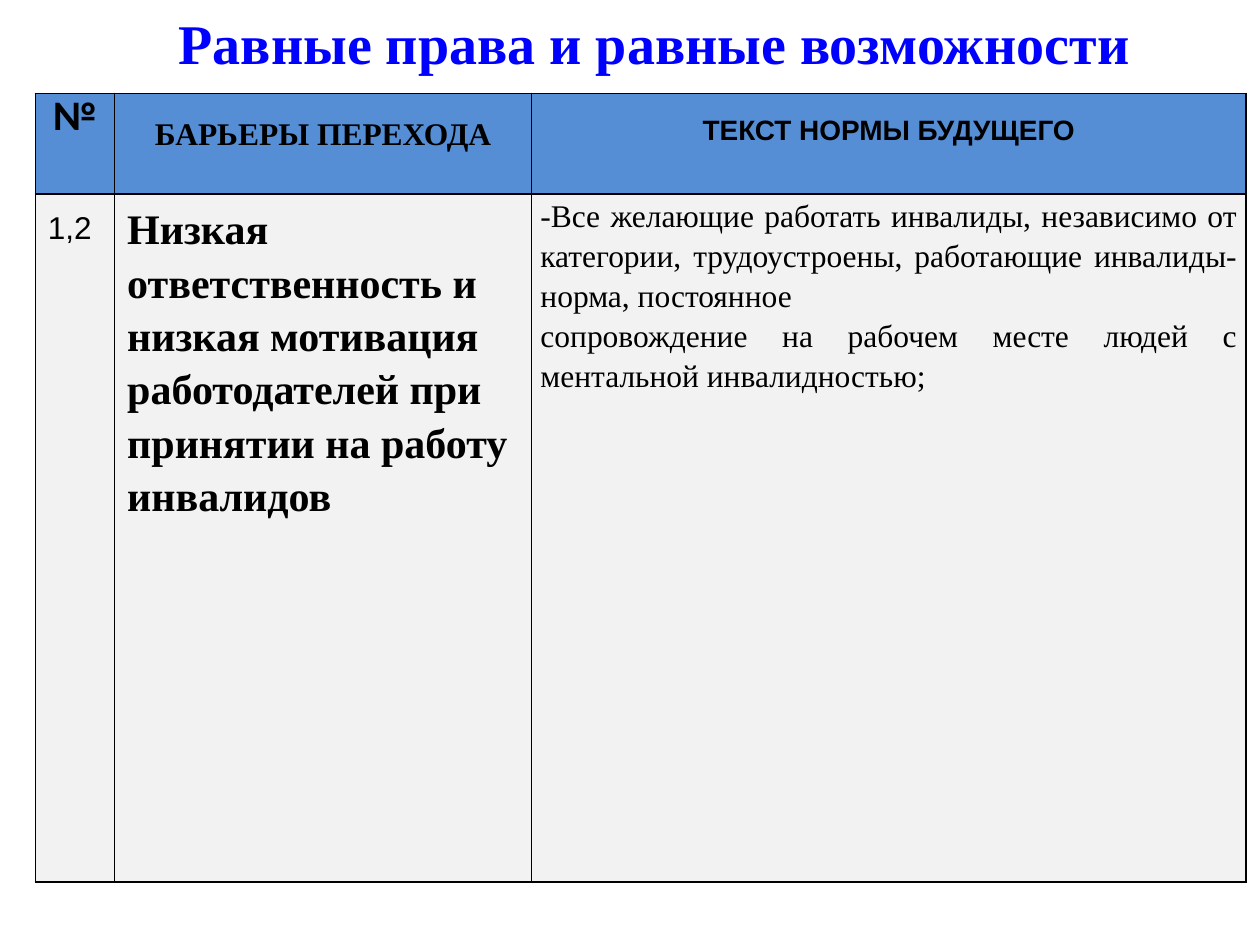
from lxml import etree
from pptx import Presentation
from pptx.dml.color import RGBColor
from pptx.enum import text
from pptx.oxml import ns
from pptx.util import Inches, Pt

BLACK = RGBColor(0x00, 0x00, 0x00)
TITLE_BLUE = RGBColor(0x00, 0x00, 0xFF)
HEADER_BLUE = RGBColor(0x55, 0x8E, 0xD5)
BODY_GREY = RGBColor(0xF2, 0xF2, 0xF2)
SERIF = "Times New Roman"
LEFT, CENTER, JUSTIFY = (text.PP_ALIGN.LEFT, text.PP_ALIGN.CENTER,
                         text.PP_ALIGN.JUSTIFY)

COLUMN_WIDTHS = (0.63, 3.31, 5.67)
ROW_HEIGHTS = (0.8, 5.46)

# Each cell: paragraphs, font, size, bold, alignment, line spacing
HEADER = (
    (["№"], "Calibri", 24, True, CENTER, Pt(24)),
    (["БАРЬЕРЫ ПЕРЕХОДА"], SERIF, 18, True, CENTER, 1.5),
    (["ТЕКСТ НОРМЫ БУДУЩЕГО"], "Arial", 16, True, CENTER, 1.5),
)
BODY = (
    (["1,2"], "Arial", 18, False, LEFT, Pt(26)),
    (["Низкая ответственность и низкая мотивация работодателей при "
      "принятии на работу инвалидов"], SERIF, 24, True, LEFT, 1.15),
    (["-Все желающие работать инвалиды, независимо от категории, "
      "трудоустроены, работающие инвалиды-норма, постоянное ",
      "сопровождение на рабочем месте людей с ментальной инвалидностью;"],
     SERIF, 18, False, JUSTIFY, 1.15),
)


def write(frame, paragraphs, font, size, bold, align, spacing, color=BLACK):
    for index, line in enumerate(paragraphs):
        para = frame.add_paragraph() if index else frame.paragraphs[0]
        para.alignment = align
        para.line_spacing = spacing
        span = para.add_run()
        span.text = line
        span.font.name = font
        span.font.size = Pt(size)
        span.font.bold = bold
        span.font.color.rgb = color


def style_cell(cell, fill):
    # Borders must come before the fill in the cell properties
    properties = cell._tc.get_or_add_tcPr()
    for side in ("lnL", "lnR", "lnT", "lnB"):
        line = etree.SubElement(properties, ns.qn(f"a:{side}"), w=str(Pt(1)))
        solid = etree.SubElement(line, ns.qn("a:solidFill"))
        etree.SubElement(solid, ns.qn("a:srgbClr"), val=str(BLACK))
    cell.fill.solid()
    cell.fill.fore_color.rgb = fill


def add_barrier_table(page, left, top, width, height):
    table = page.shapes.add_table(len(ROW_HEIGHTS), len(COLUMN_WIDTHS),
                                  left, top, width, height).table
    for column, size in zip(table.columns, COLUMN_WIDTHS):
        column.width = Inches(size)
    for row, size in zip(table.rows, ROW_HEIGHTS):
        row.height = Inches(size)
    for row, contents, fill in zip(table.rows, (HEADER, BODY),
                                   (HEADER_BLUE, BODY_GREY)):
        for cell, content in zip(row.cells, contents):
            style_cell(cell, fill)
            write(cell.text_frame, *content)

    # The long text has tighter margins
    norm = table.cell(1, 2)
    norm.margin_left = norm.margin_right = Inches(0.07)
    norm.margin_top = norm.margin_bottom = 0


def add_title(page, left, top, width, height):
    box = page.shapes.add_textbox(left, top, width, height)
    box.text_frame.word_wrap = True
    write(box.text_frame, ["Равные права и равные возможности"],
          SERIF, 32, True, CENTER, 1.0, TITLE_BLUE)


def main():
    deck = Presentation()
    deck.slide_width, deck.slide_height = Inches(10), Inches(7.5)
    page = deck.slides.add_slide(deck.slide_layouts[6])
    add_barrier_table(page, Inches(0.28), Inches(0.74),
                      Inches(sum(COLUMN_WIDTHS)), Inches(sum(ROW_HEIGHTS)))
    add_title(page, Inches(1.18), Inches(0.02), Inches(8.03), Inches(0.57))
    deck.save("out.pptx")


if __name__ == "__main__":
    main()
